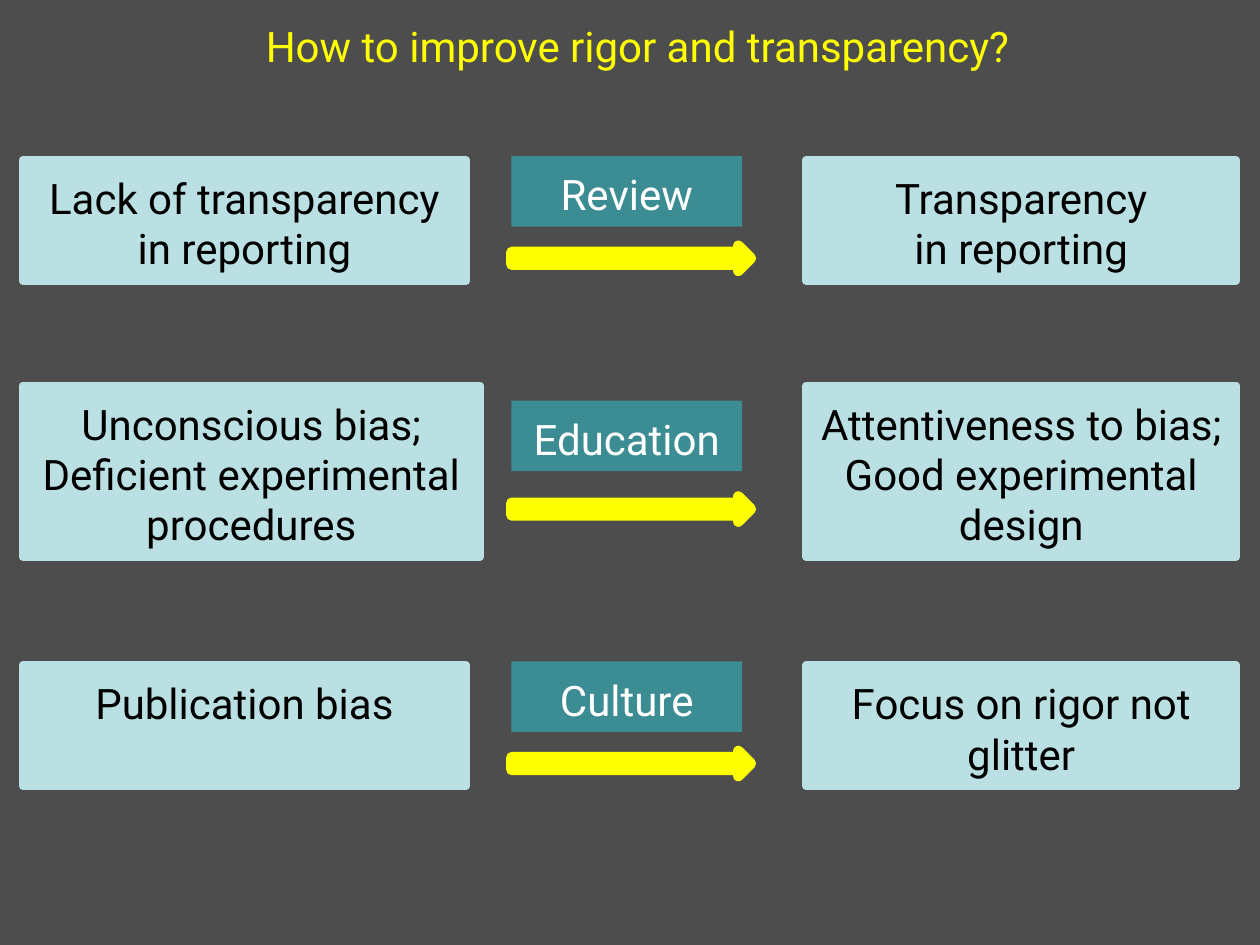
import pptx
import pptx.util
from pptx.dml.color import RGBColor
from pptx.enum.shapes import MSO_SHAPE
from pptx.enum.text import MSO_ANCHOR, PP_ALIGN
from pptx.util import Inches, Pt

GRAY = RGBColor(0x4D, 0x4D, 0x4D)
PALE = RGBColor(0xBB, 0xE0, 0xE3)
TEAL = RGBColor(0x3C, 0x8C, 0x93)
YELLOW = RGBColor(0xFF, 0xFF, 0x00)
BLACK = RGBColor(0x00, 0x00, 0x00)
WHITE = RGBColor(0xFF, 0xFF, 0xFF)

# problem lines, remedy, goal lines, box top, box height, problem width, label top, arrow top
ROWS = [
    (["Lack of transparency in reporting"], "Review",
     ["Transparency", "in reporting"], 1.27, 0.96, 3.52, 1.24, 1.1),
    (["Unconscious bias;", "Deficient experimental procedures"], "Education",
     ["Attentiveness to bias; Good experimental design"], 3.06, 1.36, 3.63, 3.18, 3.09),
    (["Publication bias"], "Culture",
     ["Focus on rigor not glitter"], 5.28, 0.96, 3.52, 5.25, 5.11),
]


def write(sp, lines, color, top_inset=0.1):
    tf = sp.text_frame
    tf.word_wrap = True
    tf.vertical_anchor = MSO_ANCHOR.TOP
    tf.margin_top = Inches(top_inset)
    tf.text = "\n".join(lines)
    for p in tf.paragraphs:
        p.alignment = PP_ALIGN.CENTER
        p.font.name = "Roboto"
        p.font.size = Pt(24)
        p.font.color.rgb = color


def add_filled(shapes, kind, box, fill, line_width=0):
    sp = shapes.add_shape(kind, *(Inches(v) for v in box))
    sp.shadow.inherit = False
    sp.fill.solid()
    sp.fill.fore_color.rgb = fill
    if line_width:
        sp.line.color.rgb = fill
        sp.line.width = Pt(line_width)
    else:
        sp.line.fill.background()
    return sp


def add_box(shapes, box, lines, fill, color, line_width=0):
    write(add_filled(shapes, MSO_SHAPE.RECTANGLE, box, fill, line_width), lines, color)


def add_arrow(shapes, top):
    sp = add_filled(shapes, MSO_SHAPE.DOWN_ARROW, (4.91, top, 0.2, 1.9), YELLOW, 6)
    sp.rotation = 270


def add_row(slide, problem, remedy, goal, top, height, width, label_top, arrow_top):
    shapes = slide.shapes.add_group_shape().shapes
    add_box(shapes, (0.18, top, width, height), problem, PALE, BLACK, 4.5)
    add_box(shapes, (6.4, top, 3.41, height), goal, PALE, BLACK, 4.5)
    add_box(shapes, (4.06, label_top, 1.83, 0.56), [remedy], TEAL, WHITE)
    add_arrow(shapes, arrow_top)


def add_title(slide, text):
    sp = slide.shapes.add_textbox(Inches(0.25), Inches(0.11), Inches(9.62), Inches(0.5))
    write(sp, [text], YELLOW, 0.05)


def main():
    prs = pptx.Presentation()
    prs.slide_width = Inches(10)
    prs.slide_height = Inches(7.5)
    slide = prs.slides.add_slide(prs.slide_layouts[6])
    slide.background.fill.solid()
    slide.background.fill.fore_color.rgb = GRAY
    for row in ROWS:
        add_row(slide, *row)
    add_title(slide, "How to improve rigor and transparency?")
    prs.save("out.pptx")


if __name__ == "__main__":
    main()
